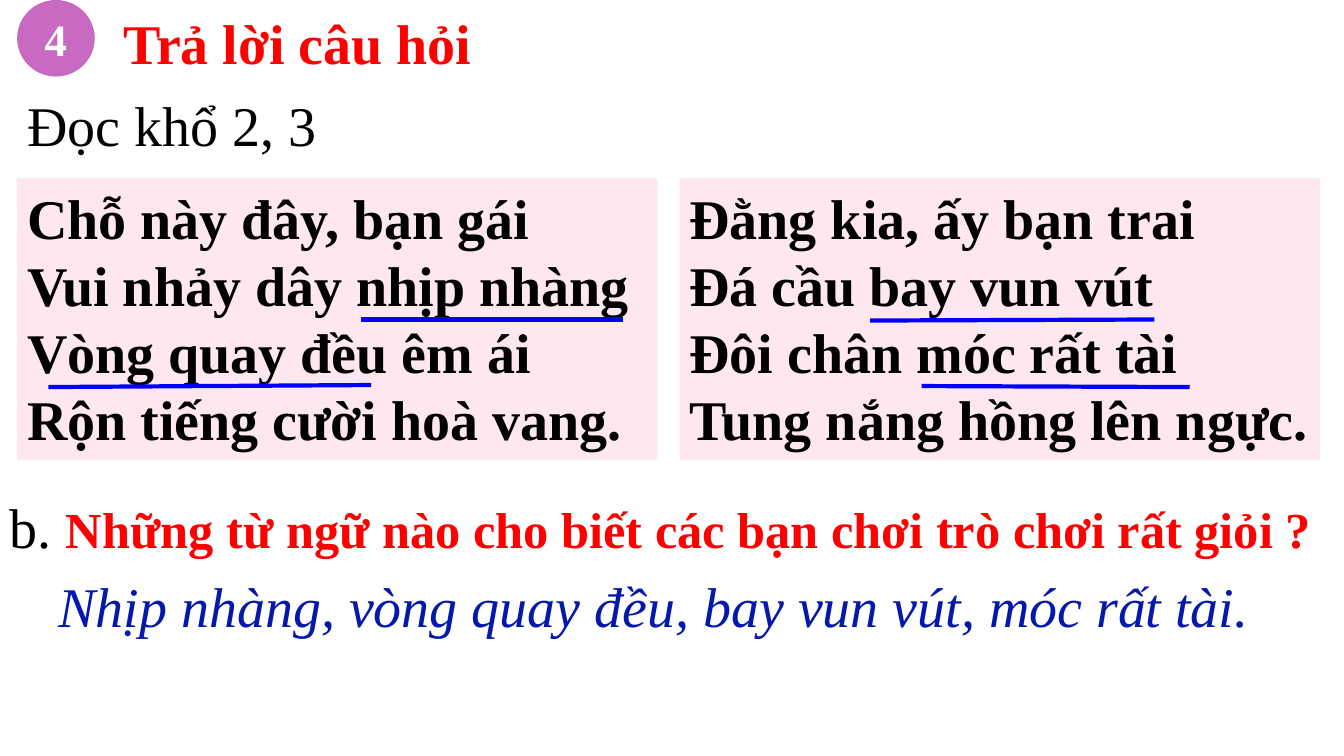
from pptx import Presentation
from pptx import util as u
from pptx.dml.color import RGBColor
from pptx.enum import shapes, text
from pptx.oxml.ns import qn
from lxml import etree

PX = 9144
BLACK, WHITE, RED, NAVY, BLUE = "000000", "FFFFFF", "FF0000", "0418AC", "0000FF"
PINK, PURPLE = "FEE7EF", "C86AC1"


def color(value):
    return RGBColor.from_string(value)


def lengths(*values):
    return [u.Emu(value * PX) for value in values]


class Board:
    base = {"name": "Times New Roman", "size": 40, "color": BLACK,
            "bold": False, "italic": False}

    def __init__(self, deck):
        self.page = deck.slides.add_slide(deck.slide_layouts[5])

    def fill_text(self, box, lines, align=text.PP_ALIGN.LEFT,
                  anchor=text.MSO_ANCHOR.TOP, wrap=True, **frame_format):
        frame = box.text_frame
        settings = {"word_wrap": wrap, "vertical_anchor": anchor,
                    "auto_size": text.MSO_AUTO_SIZE.NONE, **frame_format}
        for name, value in settings.items():
            setattr(frame, name, value)
        for index, spans in enumerate(lines):
            para = frame.add_paragraph() if index else frame.paragraphs[0]
            para.alignment = align
            for words, changes in spans:
                span = para.add_run()
                span.text = words
                for name, value in {**self.base, **changes}.items():
                    if name == "color":
                        span.font.color.rgb = color(value)
                    else:
                        setattr(span.font, name, u.Pt(value) if name == "size" else value)

    def title(self, place, words, indent):
        box = self.page.shapes.title
        for name, value in zip(("left", "top", "width", "height"), lengths(*place)):
            setattr(box, name, value)
        box.fill.solid()
        box.fill.fore_color.rgb = color(WHITE)
        self.fill_text(box, [[(words, {"color": RED, "bold": True})]],
                       margin_left=u.Emu(indent * PX))

    def label(self, place, *spans, wrap=True):
        box = self.page.shapes.add_textbox(*lengths(*place))
        self.fill_text(box, [spans], wrap=wrap)

    def panel(self, kind, place, fill, lines, **layout):
        box = self.page.shapes.add_shape(kind, *lengths(*place))
        box.shadow.inherit = False
        box.fill.solid()
        box.fill.fore_color.rgb = color(fill)
        box.line.fill.background()
        self.fill_text(box, lines, **layout)

    def underline(self, *ends):
        line = self.page.shapes.add_connector(shapes.MSO_CONNECTOR.STRAIGHT, *lengths(*ends))
        line.line.color.rgb = color(BLUE)
        line.line.width = u.Pt(3)
        etree.SubElement(line._element.spPr, qn("a:effectLst"))


def main():
    deck = Presentation()
    deck.slide_width, deck.slide_height = u.Inches(13.33), u.Inches(7.5)
    board = Board(deck)
    bold = {"bold": True}

    board.title((70, 3, 429, 77), "Trả lời câu hỏi", indent=52)
    board.label((0, 484, 1321, 77), ("b. ", {}),
                ("Những từ ngữ nào cho biết các bạn chơi trò chơi rất giỏi ?",
                 {"size": 36, "color": RED, "bold": True}))
    board.label((48, 562, 1247, 77),
                ("Nhịp nhàng, vòng quay đều, bay vun vút, móc rất tài.",
                 {"color": NAVY, "italic": True}))
    board.panel(shapes.MSO_SHAPE.OVAL, (17, 0, 77, 76), PURPLE,
                [[("4", {"size": 32, "color": WHITE, "bold": True})]],
                align=text.PP_ALIGN.CENTER, anchor=text.MSO_ANCHOR.MIDDLE)
    board.label((17, 85, 310, 77), ("Đọc khổ 2, 3", {}), wrap=False)

    stanzas = [
        ["Chỗ này đây, bạn gái", "Vui nhảy dây nhịp nhàng",
         "Vòng quay đều êm ái", "Rộn tiếng cười hoà vang."],
        ["Đằng kia, ấy bạn trai", "Đá cầu bay vun vút",
         "Đôi chân móc rất tài", "Tung nắng hồng lên ngực."],
    ]
    for column, verses in enumerate(stanzas):
        board.panel(shapes.MSO_SHAPE.RECTANGLE, (17 + column * 657, 177, 635, 279), PINK,
                    [[(verse, bold)] for verse in verses])

    for ends in [(358, 317, 618, 317), (48, 384, 368, 382),
                 (863, 318, 1145, 317), (914, 383, 1180, 384)]:
        board.underline(*ends)

    deck.save("out.pptx")


if __name__ == "__main__":
    main()
